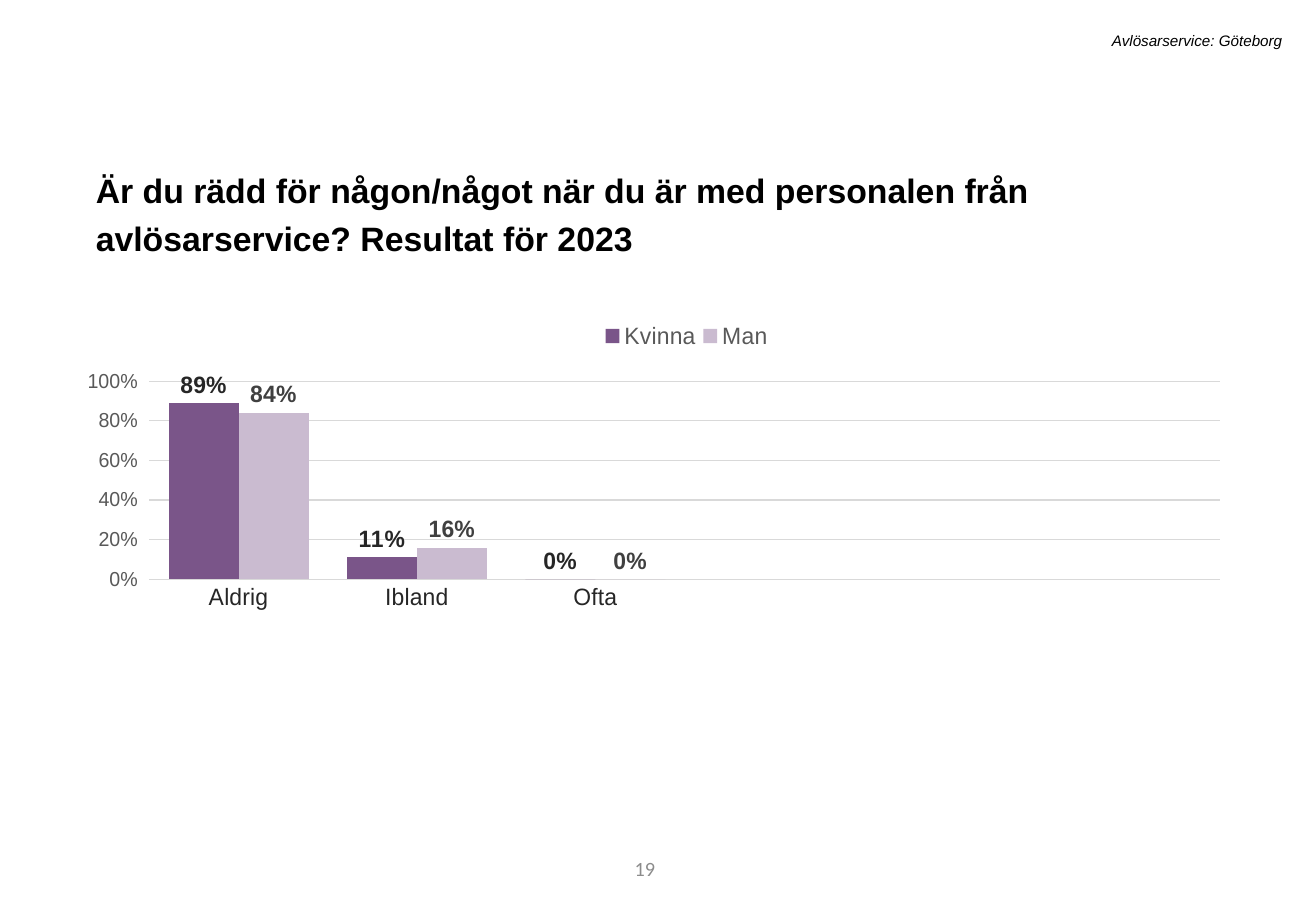
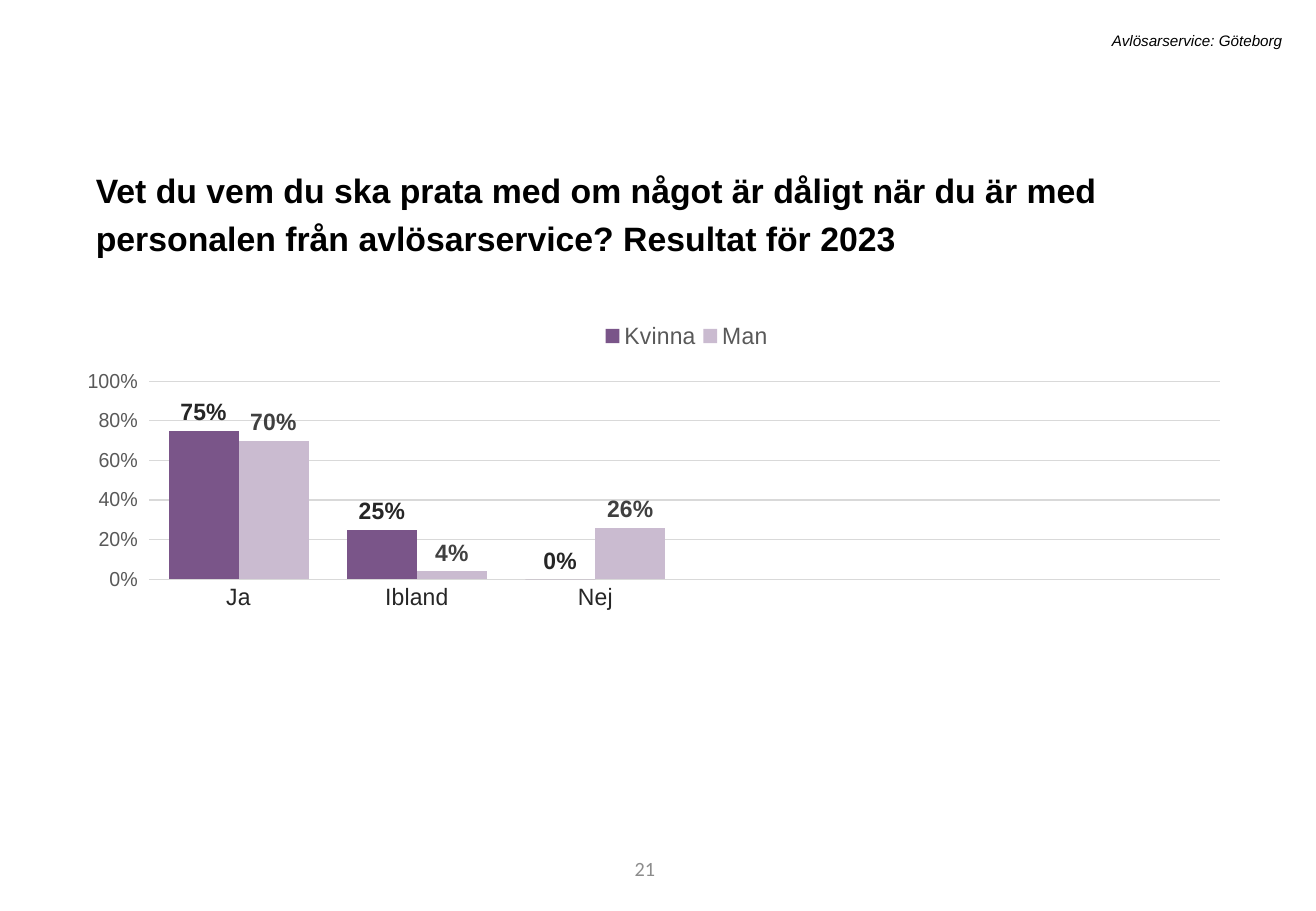
from dataclasses import dataclass

from lxml import etree
from pptx import Presentation
from pptx.chart.data import CategoryChartData
from pptx.dml.color import RGBColor
from pptx.enum import chart as kinds, text as txt
from pptx.oxml.ns import qn
from pptx.util import Inches, Pt


@dataclass(frozen=True)
class Theme:
    face: str = "Arial"
    num_face: str = "Calibri"
    black: str = "000000"
    page: str = "8C8C8C"
    grid: str = "D9D9D9"
    soft: str = "595959"
    dark: str = "262626"
    bars: tuple = ("7A5589", "CABBD0")
    labels: tuple = ("262626", "404040")
    title: int = 20
    large: int = 14
    small: int = 12
    base: int = 10
    head: int = 9


T = Theme()
RIGHT = txt.PP_ALIGN.RIGHT
GROW = txt.MSO_AUTO_SIZE.SHAPE_TO_FIT_TEXT
PAGE = (3.05, 6.95, 2.44, 0.4)
CHART = (0.72, 2.53, 9.4, 3.95)
TITLE = (0.69, 1.28, 9.4, 0.47)
HEAD = (1.79, 0.21, 8.86, 0.25)
PLOT = (0.025, 0.154, 0.966, 0.413)
LEGEND = (0.43, 0.025, 0.16, 0.07)


def put(obj, **vals):
    for key, val in vals.items():
        setattr(obj, key, val)


def style(font, size, color, name=T.face, **more):
    put(font, size=Pt(size), name=name, **more)
    font.color.rgb = RGBColor.from_string(color)


def rule(line):
    line.width = Pt(0.75)
    line.color.rgb = RGBColor.from_string(T.grid)


def write(slide, box, words, look, para=None, frame=None):
    area = slide.shapes.add_textbox(*map(Inches, box)).text_frame
    put(area, word_wrap=True, **(frame or {}))
    line = area.paragraphs[0]
    put(line, **(para or {}))
    run = line.add_run()
    run.text = words
    style(run.font, **look)


def place(node, spot, box, inner=False):
    """Give a chart part a manual layout, as shares of the chart."""
    for old in node.findall(qn("c:layout")):
        node.remove(old)
    layout = etree.Element(qn("c:layout"))
    manual = etree.SubElement(layout, qn("c:manualLayout"))
    vals = [("layoutTarget", "inner")] if inner else []
    vals += [("xMode", "edge"), ("yMode", "edge"), *zip("xywh", box)]
    for tag, val in vals:
        etree.SubElement(manual, qn("c:" + tag)).set("val", str(val))
    node.insert(spot, layout)


def style_axes(chart):
    cat, val = chart.category_axis, chart.value_axis
    put(cat, major_tick_mark=kinds.XL_TICK_MARK.NONE, has_major_gridlines=False)
    style(cat.tick_labels.font, T.large, T.dark)
    rule(cat.format.line)
    put(val, minimum_scale=0, maximum_scale=1, major_unit=0.2,
        major_tick_mark=kinds.XL_TICK_MARK.OUTSIDE, has_major_gridlines=True)
    put(val.tick_labels, number_format="0%", number_format_is_linked=False)
    style(val.tick_labels.font, T.small, T.soft)
    val.format.line.fill.background()
    rule(val.major_gridlines.format.line)


def style_bars(plot):
    put(plot, gap_width=55, overlap=0, vary_by_categories=False)
    for bar, fill, ink in zip(plot.series, T.bars, T.labels):
        bar.format.fill.solid()
        bar.format.fill.fore_color.rgb = RGBColor.from_string(fill)
        put(bar, invert_if_negative=False)
        put(bar.data_labels, show_value=True, number_format="0%",
            number_format_is_linked=False,
            position=kinds.XL_LABEL_POSITION.OUTSIDE_END)
        style(bar.data_labels.font, T.large, ink, bold=True)


def draw_chart(slide, box, cats, women, men):
    data = CategoryChartData(number_format="0%")
    data.categories = [*cats, "", "", ""]
    data.add_series("Kvinna", [*women, None, None, None])
    data.add_series("Man", [*men, None, None, None])
    chart = slide.shapes.add_chart(
        kinds.XL_CHART_TYPE.COLUMN_CLUSTERED, *map(Inches, box), data).chart
    put(chart, has_title=False, has_legend=True)
    style(chart.font, T.base, T.black)
    put(chart.legend, position=kinds.XL_LEGEND_POSITION.TOP,
        include_in_layout=False)
    style(chart.legend.font, T.large, T.soft)
    style_axes(chart)
    style_bars(chart.plots[0])
    root = chart.element if hasattr(chart, "element") else chart._chartSpace
    place(next(root.iter(qn("c:plotArea"))), 0, PLOT, inner=True)
    place(next(root.iter(qn("c:legend"))), 1, LEGEND)


def add_result(deck, page, title, cats, women, men):
    slide = deck.slides.add_slide(deck.slide_layouts[6])
    write(slide, PAGE, page,
          dict(size=T.small, color=T.page, name=T.num_face),
          dict(alignment=RIGHT),
          dict(vertical_anchor=txt.MSO_ANCHOR.MIDDLE))
    draw_chart(slide, CHART, cats, women, men)
    write(slide, TITLE, title, dict(size=T.title, color=T.black, bold=True),
          dict(line_spacing=1.2, space_before=Pt(10)), dict(auto_size=GROW))
    write(slide, HEAD, "Avlösarservice: Göteborg",
          dict(size=T.head, color=T.black, italic=True),
          dict(alignment=RIGHT), dict(auto_size=GROW))


RESULTS = [
    ("19", "Är du rädd för någon/något när du är med personalen från "
     "avlösarservice? Resultat för 2023",
     ("Aldrig", "Ibland", "Ofta"), (0.89, 0.11, 0), (0.84, 0.16, 0)),
    ("21", "Vet du vem du ska prata med om något är dåligt när du är med "
     "personalen från avlösarservice? Resultat för 2023",
     ("Ja", "Ibland", "Nej"), (0.75, 0.25, 0), (0.7, 0.04, 0.26)),
]


def main():
    deck = Presentation()
    put(deck, slide_width=Inches(10.83), slide_height=Inches(7.5))
    for result in RESULTS:
        add_result(deck, *result)
    deck.save("out.pptx")


if __name__ == "__main__":
    main()
